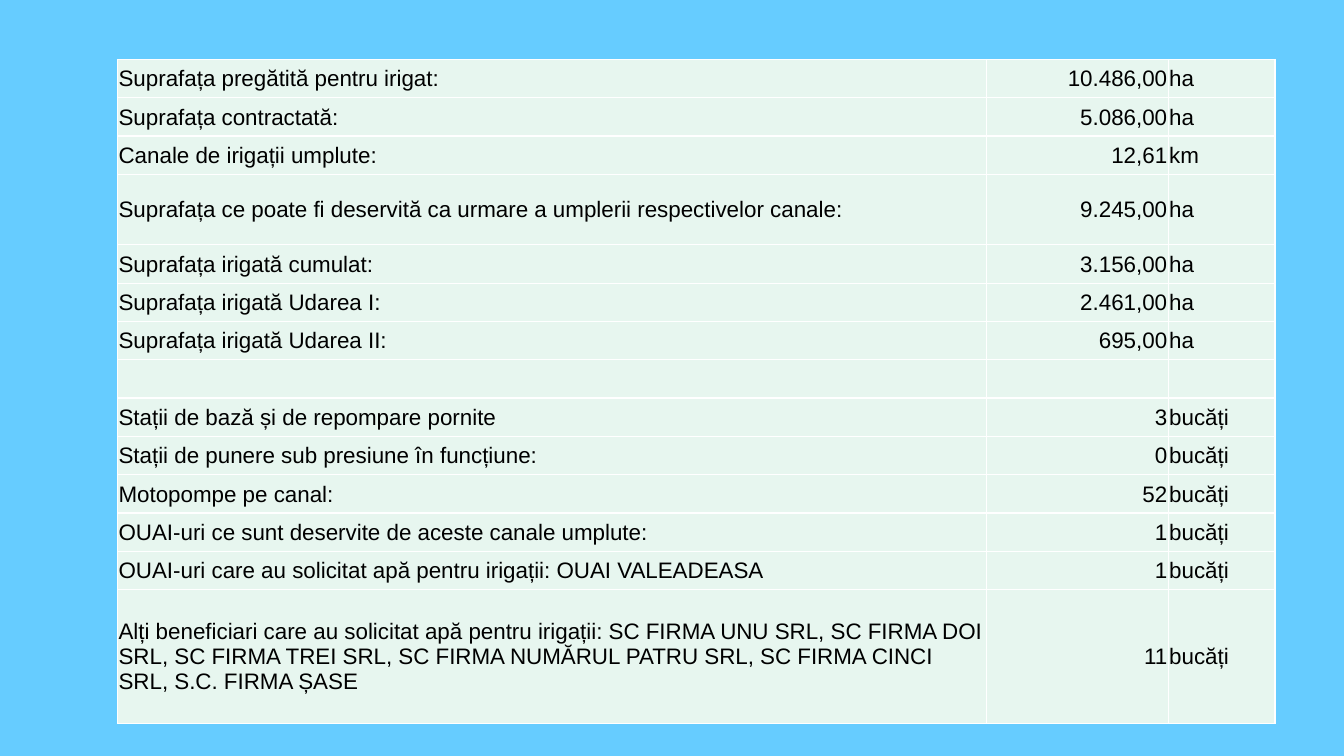
from lxml.etree import SubElement
from pptx import Presentation
from pptx.dml.color import RGBColor
from pptx.enum.text import MSO_ANCHOR as Anchor, PP_ALIGN as Align
from pptx.oxml.ns import qn
from pptx.util import Inches, Pt

COLORS = {"sky": "66CCFF", "mint": "E7F6EF", "ink": "000000", "rule": "FFFFFF"}
COLUMN_SHARES = [64.67, 13.5, 7.95]
ROW_SHARE = 5.07
TALL_ROWS = {3: 9.33, 13: 17.73}
ALIGNMENTS = [Align.LEFT, Align.RIGHT, Align.LEFT]

IRRIGATION = [
    ("Suprafața pregătită pentru irigat:", "10.486,00", "ha"),
    ("Suprafața contractată:", "5.086,00", "ha"),
    ("Canale de irigații umplute:", "12,61", "km"),
    ("Suprafața ce poate fi deservită ca urmare a umplerii respectivelor canale:", "9.245,00", "ha"),
    ("Suprafața irigată cumulat:", "3.156,00", "ha"),
    ("Suprafața irigată Udarea I:", "2.461,00", "ha"),
    ("Suprafața irigată Udarea II:", "695,00", "ha"),
    ("", "", ""),
    ("Stații de bază și de repompare pornite", "3", "bucăți"),
    ("Stații de punere sub presiune în funcțiune:", "0", "bucăți"),
    ("Motopompe pe canal:", "52", "bucăți"),
    ("OUAI-uri ce sunt deservite de aceste canale umplute:", "1", "bucăți"),
    ("OUAI-uri care au solicitat apă pentru irigații: OUAI VALEADEASA", "1", "bucăți"),
    ("Alți beneficiari care au solicitat apă pentru irigații: SC FIRMA UNU SRL, SC "
     "FIRMA DOI SRL, SC FIRMA TREI SRL, SC FIRMA NUMĂRUL PATRU SRL, SC "
     "FIRMA CINCI SRL, S.C. FIRMA ȘASE", "11", "bucăți"),
]


class SlideBuilder:
    font = "Arial"
    size = Pt(16)

    def __init__(self, deck):
        self.deck = deck
        self.page = deck.slides.add_slide(deck.slide_layouts[6])

    def across(self, share):
        return int(self.deck.slide_width * share / 100)

    def down(self, share):
        return int(self.deck.slide_height * share / 100)

    def background(self, color):
        fill = self.page.background.fill
        fill.solid()
        fill.fore_color.rgb = RGBColor.from_string(COLORS[color])

    def borders(self, cell):
        properties = cell._tc.get_or_add_tcPr()
        for side in ("a:lnL", "a:lnR", "a:lnT", "a:lnB"):
            line = SubElement(properties, qn(side), w=str(Pt(1)))
            fill = SubElement(line, qn("a:solidFill"))
            SubElement(fill, qn("a:srgbClr"), val=COLORS["rule"])

    def cell(self, cell, text, alignment):
        self.borders(cell)
        cell.fill.solid()
        cell.fill.fore_color.rgb = RGBColor.from_string(COLORS["mint"])
        cell.vertical_anchor = Anchor.MIDDLE
        cell.margin_left = cell.margin_right = cell.margin_top = Inches(0.01)
        cell.margin_bottom = 0
        para = cell.text_frame.paragraphs[0]
        para.alignment = alignment
        if text:
            span = para.add_run()
            span.text = text
            span.font.name = self.font
            span.font.size = self.size
            span.font.color.rgb = RGBColor.from_string(COLORS["ink"])

    def table(self, left, top, widths, heights, rows):
        frame = self.page.shapes.add_table(
            len(rows), len(widths), self.across(left), self.down(top),
            self.across(sum(widths)), self.down(sum(heights)))
        table = frame.table
        table.first_row = table.horz_banding = False
        for column, width in zip(table.columns, widths):
            column.width = self.across(width)
        for row, height, texts in zip(table.rows, heights, rows):
            row.height = self.down(height)
            for cell, text, alignment in zip(row.cells, texts, ALIGNMENTS):
                self.cell(cell, text, alignment)


def main():
    deck = Presentation()
    deck.slide_width, deck.slide_height = Inches(13.33), Inches(7.5)
    builder = SlideBuilder(deck)
    builder.background("sky")
    heights = [TALL_ROWS.get(index, ROW_SHARE) for index in range(len(IRRIGATION))]
    builder.table(8.75, 7.87, COLUMN_SHARES, heights, IRRIGATION)
    deck.save("out.pptx")


if __name__ == "__main__":
    main()
